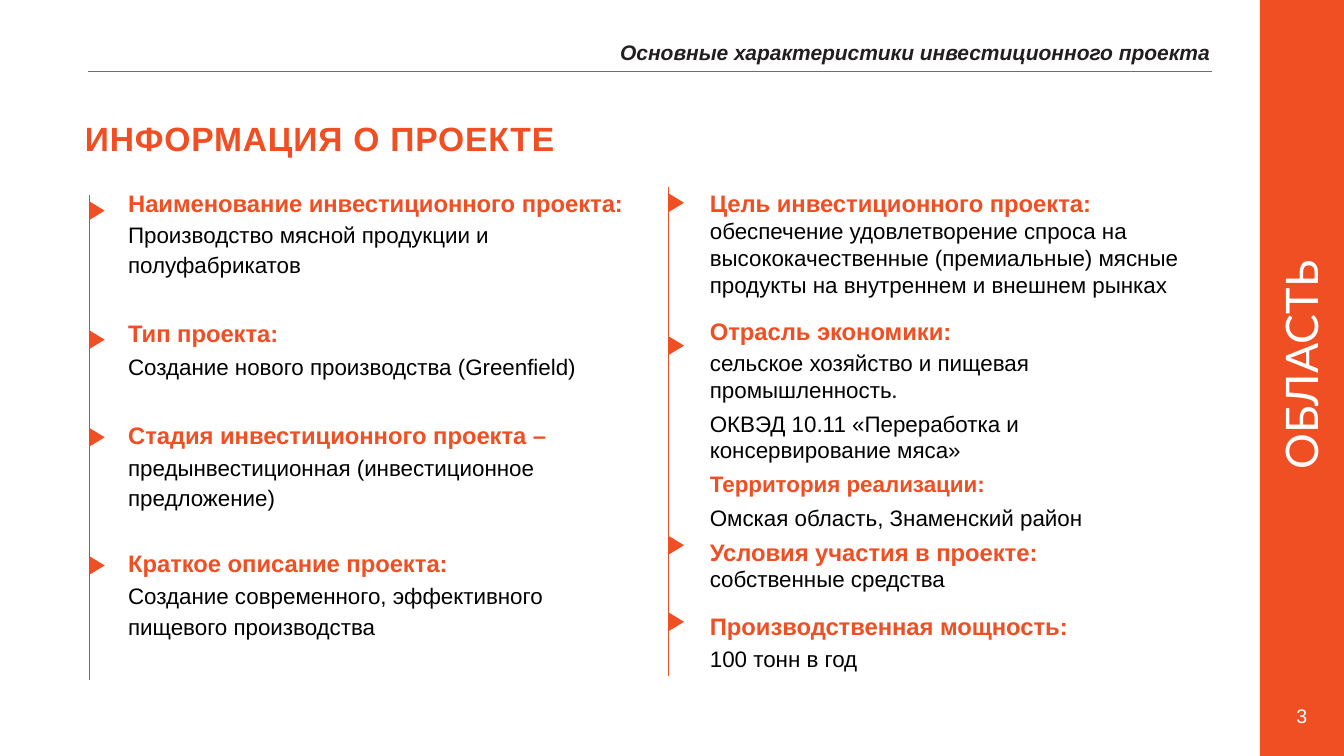
from lxml import etree
from pptx import Presentation
from pptx.dml.color import RGBColor
from pptx.enum.shapes import MSO_CONNECTOR, MSO_SHAPE
from pptx.enum.text import PP_ALIGN
from pptx.oxml.ns import qn
from pptx.util import Cm, Pt

LINE = MSO_CONNECTOR.STRAIGHT
BAR = MSO_SHAPE.RECTANGLE
CENTER = PP_ALIGN.CENTER
ORANGE = RGBColor(0xF0, 0x4E, 0x23)
GREY = RGBColor(0x6D, 0x6E, 0x71)
INK = RGBColor(0x23, 0x1F, 0x20)
BLACK = RGBColor(0, 0, 0)
WHITE = RGBColor(255, 255, 255)

deck = Presentation()
deck.slide_width, deck.slide_height = Cm(33.87), Cm(19.05)
slide = deck.slides.add_slide(deck.slide_layouts[6])
shapes = slide.shapes


def add_box(left, top, width, height, inset=0, indent=0.03):
    box = shapes.add_textbox(Cm(left), Cm(top), Cm(width), Cm(height))
    frame = box.text_frame
    frame.word_wrap = True
    frame.margin_left, frame.margin_top = Cm(indent), Cm(inset)
    frame.margin_right = frame.margin_bottom = 0
    return box


def style(font, size, color, bold=False, name="Arial"):
    font.name, font.size, font.bold = name, Pt(size), bold
    font.color.rgb = color


bar = shapes.add_shape(BAR, Cm(31.75), 0, Cm(2.12), Cm(19.05))
bar.shadow.inherit = False
bar.fill.solid()
bar.fill.fore_color.rgb = ORANGE
bar.line.fill.background()

side = add_box(29.74, 8.4, 6.1, 1.6, 0.1, 0)
side.rotation = 270
label = side.text_frame.paragraphs[0]
label.text = "ОБЛАСТЬ"
label.alignment = CENTER
style(label.font, 32, WHITE, name="Lato")

title = add_box(1.3, 1.93, 29.87, 2.11, 1.08, 0.84).text_frame.paragraphs[0]
title.text = "ИНФОРМАЦИЯ О ПРОЕКТЕ"
style(title.font, 24, ORANGE, True)
title.runs[0]._r.get_or_add_rPr().set("spc", "60")

head = add_box(15.6, 0.97, 14.99, 0.71, 0.03).text_frame.paragraphs[0]
head.text = "Основные характеристики инвестиционного проекта"
style(head.font, 15, INK, True)
head.font.italic = True
head.runs[0]._r.get_or_add_rPr().set("spc", "-4")

page = add_box(32.54, 17.7, 0.53, 0.76, 0.05, 0.13).text_frame.paragraphs[0]
page.text = "3"
style(page.font, 14, WHITE)

for x1, y1, x2, y2, color, weight in [
    (2.21, 1.8, 30.54, 1.8, GREY, 0.5),
    (2.26, 4.92, 2.26, 17.13, GREY, 1),
    (16.84, 4.72, 16.84, 17.04, ORANGE, 1),
]:
    rule = shapes.add_connector(LINE, Cm(x1), Cm(y1), Cm(x2), Cm(y2))
    rule.line.color.rgb = color
    rule.line.width = Pt(weight)
    etree.SubElement(rule._element.spPr, qn("a:effectLst"))

HALF, DEEP = 0.23, 0.38
for left, mids in [(2.26, (5.31, 8.56, 11.02, 14.25)),
                   (16.86, (5.11, 8.71, 13.74, 15.67))]:
    tip = Cm(left + DEEP)
    pen = shapes.build_freeform(tip, Cm(mids[0]))
    for i, mid in enumerate(mids):
        if i:
            pen.move_to(tip, Cm(mid))
        pen.add_line_segments([(Cm(left), Cm(mid - HALF)),
                               (Cm(left), Cm(mid + HALF))])
    marks = pen.convert_to_shape()
    marks.shadow.inherit = False
    marks.fill.solid()
    marks.fill.fore_color.rgb = ORANGE
    marks.line.fill.background()

HEAD = (17, ORANGE, True)
MINOR = (16, ORANGE, True)
BODY = (16, BLACK, False)
LOOSE = 1.14
goals = [
    (0, LOOSE, [("Наименование инвестиционного проекта: ", HEAD),
                ("Производство мясной продукции и полуфабрикатов", BODY)]),
    (29.2, 1, [("Тип проекта:", HEAD)]),
    (0.9, LOOSE, [("Создание нового производства (Greenfield)", BODY)]),
    (29.2, 1, [("Стадия инвестиционного проекта –", HEAD)]),
    (0.9, LOOSE, [("предынвестиционная (инвестиционное предложение)", BODY)]),
    (26.8, 1, [("Краткое описание проекта:", HEAD)]),
    (0.9, LOOSE, [("Создание современного, эффективного пищевого производства", BODY)]),
]
terms = [
    (0, 1, [("Цель инвестиционного проекта:", HEAD)]),
    (0, 1, [("обеспечение удовлетворение спроса на высококачественные "
             "(премиальные) мясные продукты на внутреннем и внешнем рынках", BODY)]),
    (13.8, 1, [("Отрасль экономики:", HEAD)]),
    (2.6, 1, [("сельское хозяйство и пищевая промышленность", BODY),
              (".", (16, INK, False, "Lato"))]),
    (4.8, 1, [("ОКВЭД 10.11 «Переработка и консервирование мяса»", BODY)]),
    (4.8, 1, [("Территория реализации:", MINOR)]),
    (4.8, 1, [("Омская область, Знаменский район", BODY)]),
    (4.8, 1, [("Условия участия в проекте:", HEAD)]),
    (0, Pt(19), [("собственные средства", BODY)]),
    (13.8, 1, [("Производственная мощность:", HEAD)]),
    (0.9, LOOSE, [("100 тонн в год", BODY)]),
]
for box, rows in [(add_box(3.2, 4.62, 12.98, 11.68, 0.03), goals),
                  (add_box(17.86, 4.62, 12.32, 12.42, 0.13), terms)]:
    frame = box.text_frame
    for i, (before, pitch, parts) in enumerate(rows):
        para = frame.add_paragraph() if i else frame.paragraphs[0]
        para.line_spacing = pitch
        if before:
            para.space_before = Pt(before)
        for text, look in parts:
            run = para.add_run()
            run.text = text
            style(para.font if len(parts) == 1 else run.font, *look)
            if look == HEAD:
                run._r.get_or_add_rPr().set("spc", "-7")

deck.save("out.pptx")
